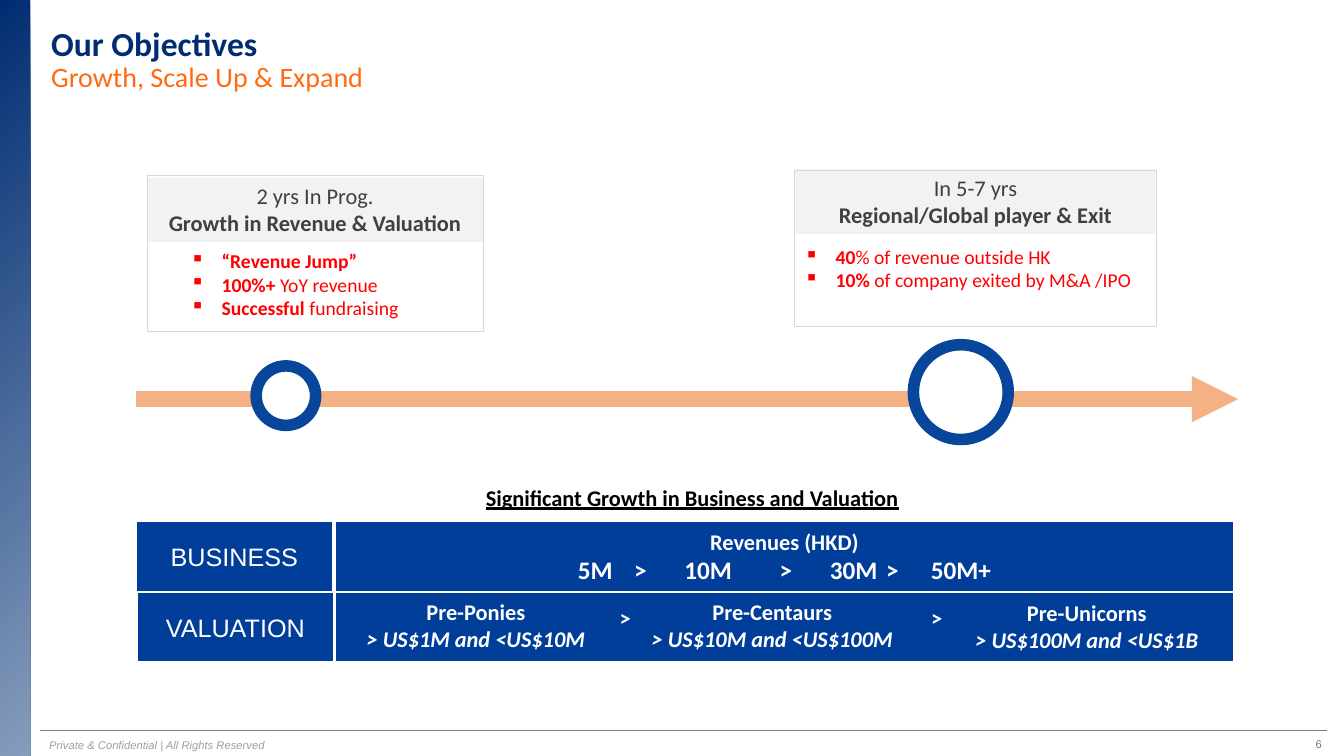
from lxml import etree
from pptx import Presentation
from pptx import util as u
from pptx.dml.color import RGBColor
from pptx.enum import shapes, text
from pptx.oxml.ns import qn

PX = 9144  # EMU in one px, 100 px to the inch
NAVY, RING, CELL, WHITE = "002D72", "08469B", "003E9A", "FFFFFF"
LEFT, CENTER, RIGHT = text.PP_ALIGN.LEFT, text.PP_ALIGN.CENTER, text.PP_ALIGN.RIGHT
TOP, MIDDLE = text.MSO_ANCHOR.TOP, text.MSO_ANCHOR.MIDDLE

deck = Presentation()
deck.slide_width, deck.slide_height = 1333 * PX, 750 * PX
page = deck.slides.add_slide(deck.slide_layouts[6])


def add_box(area, fill=None, line=None, width=1.5, kind=shapes.MSO_SHAPE.RECTANGLE):
    """Add a preset shape; without a fill or line colour that part stays empty."""
    box = page.shapes.add_shape(kind, *[n * PX for n in area])
    box.shadow.inherit = False
    if fill:
        box.fill.solid()
        box.fill.fore_color.rgb = RGBColor.from_string(fill)
    else:
        box.fill.background()
    if line:
        box.line.color.rgb = RGBColor.from_string(line)
        box.line.width = u.Pt(width)
    else:
        box.line.fill.background()
    return box


def write(target, paras, color, size=16, align=CENTER, anchor=MIDDLE, font="Calibri",
          wrap=True, bullet=None):
    """Fill a shape, or a new text box at an area, with lists of (text, styles) runs."""
    if isinstance(target, tuple):
        target = page.shapes.add_textbox(*[n * PX for n in target])
    frame = target.text_frame
    frame.word_wrap, frame.vertical_anchor = wrap, anchor
    for index, runs in enumerate(paras):
        para = frame.paragraphs[0] if index == 0 else frame.add_paragraph()
        para.alignment = align
        if bullet:
            props = para._p.get_or_add_pPr()
            props.set("marL", str(31 * PX))
            props.set("indent", str(-31 * PX))
            etree.SubElement(props, qn("a:buChar")).set("char", bullet)
        for words, styles in runs:
            span = para.add_run()
            span.text = words
            span.font.name, span.font.size = font, u.Pt(size)
            span.font.color.rgb = RGBColor.from_string(color)
            span.font.bold, span.font.italic = "b" in styles, "i" in styles
            span.font.underline = "u" in styles
    return frame


# Side bar, footer and title
bar = add_box((0, 0, 30, 750), NAVY)
bar.fill.gradient()
bar.fill.gradient_angle = 315
for stop, color in zip(bar.fill.gradient_stops, (NAVY, "869CBC")):
    stop.color.rgb = RGBColor.from_string(color)

number = write((1264, 725, 52, 26), [[("6", "")]], "6D7783", 8, RIGHT, font="Arial")
number.margin_left = number.margin_right = 5 * PX
number.margin_top = number.margin_bottom = 3 * PX
write((39, 728, 533, 24), [[("Private & Confidential | All Rights Reserved", "i")]],
      "9F9F9F", 8, LEFT, TOP, "Arial")

title = write((41, 22, 744, 89), [[("Our Objectives", "b")], [("Growth, Scale Up & Expand", "")]],
              NAVY, 24, LEFT, TOP)
for para in title.paragraphs:
    para.line_spacing = 0.9
subtitle = title.paragraphs[1].runs[0].font
subtitle.size, subtitle.color.rgb = u.Pt(20), RGBColor.from_string("FF6A13")

# Goal cards: frame, heading area, bullet area, heading and goals
cards = [
    ((146, 174, 333, 155), (146, 176, 333, 64), (179, 242, 280, 81),
     "2 yrs In Prog.", "Growth in Revenue & Valuation",
     [[("“Revenue Jump”", "b")],
      [("100%+ ", "b"), ("YoY revenue", "")],
      [("Successful", "b"), (" fundraising", "")]]),
    ((788, 169, 359, 155), (789, 168, 357, 64), (788, 238, 359, 57),
     "In 5-7 yrs", "Regional/Global player & Exit",
     [[("40", "b"), ("% of revenue outside HK", "")],
      [("10% ", "b"), ("of company exited by M&A /IPO", "")]]),
]
for outline, heading, body, when, goal, points in cards:
    write(add_box(heading, "F2F2F2"), [[(when, "")], [(goal, "b")]], "404040", anchor=TOP)
    write(body, points, "FF0000", 14, LEFT, TOP, bullet="▪")
    add_box(outline, line="D9D9D9", width=0.25)

# Footer rule and timeline arrow
for left, right, y, color, width, head in [(40, 1316, 725, "808080", 0.5, None),
                                           (135, 1228, 396, "F4B183", 11, "triangle")]:
    rule = page.shapes.add_connector(shapes.MSO_CONNECTOR.STRAIGHT,
                                     left * PX, y * PX, right * PX, y * PX)
    rule.line.color.rgb = RGBColor.from_string(color)
    rule.line.width = u.Pt(width)
    if head:
        etree.SubElement(rule.line._get_or_add_ln(), qn("a:tailEnd")).set("type", head)
    etree.SubElement(rule._element.spPr, qn("a:effectLst"))

for left, top, size in [(906, 342, 94), (254, 363, 59)]:
    add_box((left, top, size, size), WHITE, RING, 8.25, shapes.MSO_SHAPE.OVAL)

# Business and valuation grid
write((472, 475, 437, 37), [[("Significant Growth in Business and Valuation", "bu")]],
      "000000", align=LEFT, anchor=TOP, wrap=False)

for row, label in enumerate(["BUSINESS", "VALUATION"]):
    top = 517 + 70 * row
    write(add_box((135 + row, top, 195, 70), CELL, WHITE), [[(label, "")]], WHITE, 18, font="Arial")
    band = add_box((332, top, 892, 70), CELL, WHITE)
    if row == 0:
        revenues = write(band, [[("Revenues (HKD)", "b")],
                                [("5M\t >\t 10M \t> \t30M\t > \t50M+", "b")]], WHITE)
        revenues.paragraphs[1].runs[0].font.size = u.Pt(18)

for left, top, stage, valuation in [(322, 600, "Pre-Ponies", "> US$1M and <US$10M"),
                                    (616, 600, "Pre-Centaurs", "> US$10M and <US$100M"),
                                    (928, 601, "Pre-Unicorns", "> US$100M and <US$1B")]:
    write((left, top, 300, 40), [[(stage, "b")], [(valuation, "bi")]], WHITE)

for left in (599, 908):
    write((left, 594, 37, 38), [[(" >", "b")]], WHITE, wrap=False)

deck.save("out.pptx")
